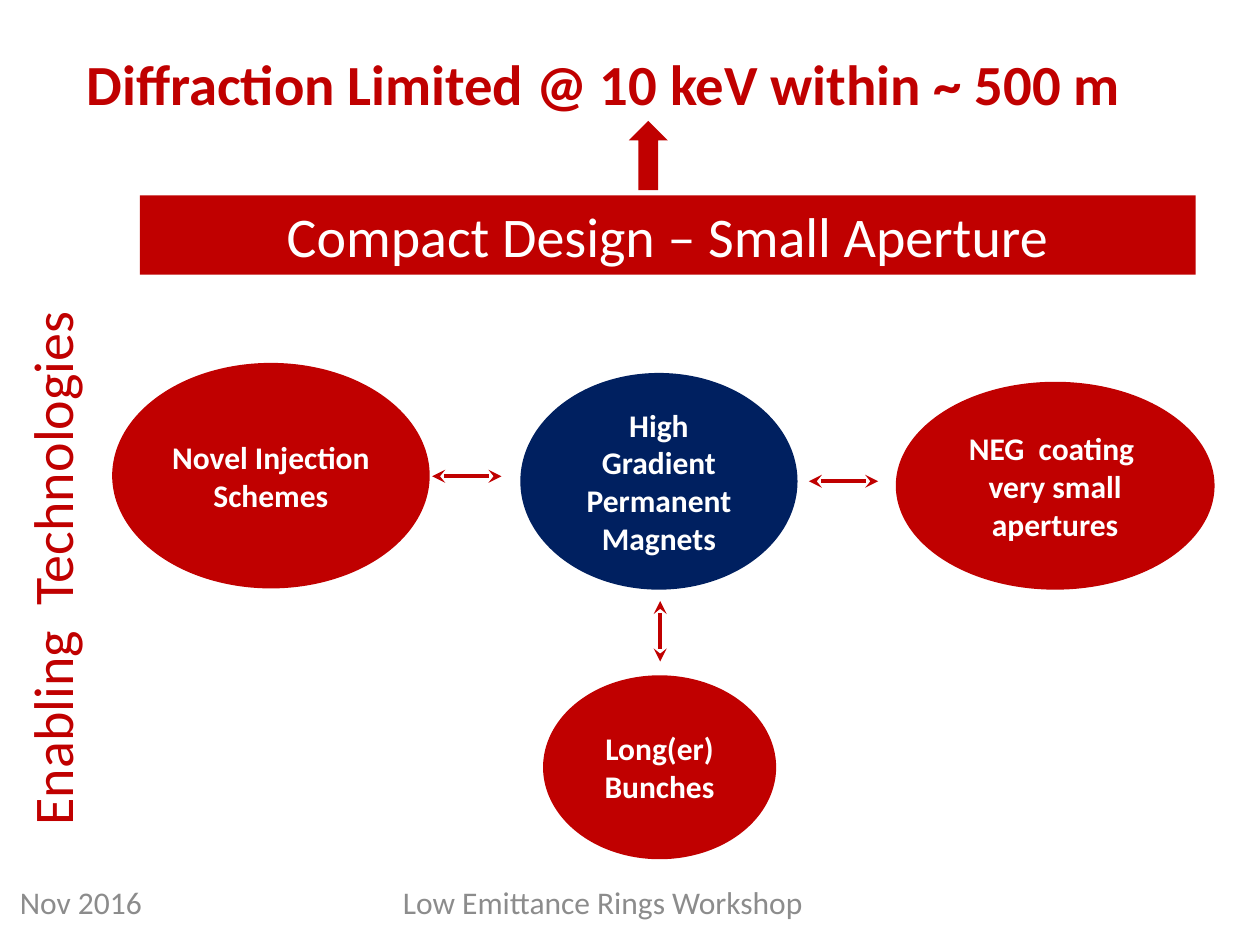
from typing import NamedTuple

from lxml.etree import SubElement
from pptx import Presentation
from pptx.dml.color import RGBColor
from pptx.enum.shapes import MSO_CONNECTOR, MSO_SHAPE
from pptx.enum.text import MSO_ANCHOR, PP_ALIGN
from pptx.oxml.ns import qn
from pptx.util import Inches, Pt

COLUMNS, ROWS = 100, 75  # grid laid over the slide
RED, NAVY, WHITE, GRAY = "C00000", "002060", "FFFFFF", "8C8C8C"


class Area(NamedTuple):
    """Left, top, width and height in grid columns and rows."""
    left: float
    top: float
    width: float
    height: float


class Style(NamedTuple):
    size: float
    color: str
    bold: bool = False
    align: PP_ALIGN = PP_ALIGN.LEFT
    anchor: MSO_ANCHOR = MSO_ANCHOR.TOP


class Label(NamedTuple):
    text: str
    area: Area
    style: Style
    vertical: bool = False


class Block(NamedTuple):
    kind: MSO_SHAPE
    area: Area
    fill: str
    text: str = ""
    style: Style = Style(18, WHITE, True, PP_ALIGN.CENTER, MSO_ANCHOR.MIDDLE)


class Link(NamedTuple):
    start: tuple[float, float]
    end: tuple[float, float]


FOOTER = Style(18, GRAY)
BANNER = Style(32, WHITE, False, PP_ALIGN.CENTER, MSO_ANCHOR.MIDDLE)

LABELS = [
    Label("Low Emittance Rings Workshop", Area(25.6, 69.6, 44.5, 4),
          FOOTER._replace(align=PP_ALIGN.CENTER)),
    Label("Nov 2016", Area(0.6, 69.6, 20.3, 4), FOOTER),
    Label("Diffraction Limited @ 10 keV within ~ 500 m", Area(5.9, 2.9, 90.6, 6.9),
          Style(32.4, RED, True, anchor=MSO_ANCHOR.BOTTOM)),
    Label("Enabling  Technologies", Area(0.9, 21.7, 7.4, 44.8), Style(32, RED), True),
]

BLOCKS = [
    Block(MSO_SHAPE.OVAL, Area(8.9, 28.8, 25.2, 17.9), RED, "Novel Injection Schemes"),
    Block(MSO_SHAPE.OVAL, Area(41.3, 29.6, 22, 17.2), NAVY, "High Gradient Permanent Magnets"),
    Block(MSO_SHAPE.OVAL, Area(71.1, 30.3, 25.3, 16.5), RED, "NEG  coating  very small apertures"),
    Block(MSO_SHAPE.OVAL, Area(43.1, 53.6, 18.5, 14.6), RED, "Long(er) Bunches"),
    Block(MSO_SHAPE.RECTANGLE, Area(11.1, 15.5, 83.8, 6.3), RED,
          "Compact Design – Small Aperture", BANNER),
    Block(MSO_SHAPE.UP_ARROW, Area(49.9, 9.6, 3.1, 5.5), RED),
]

LINKS = [
    Link((34.3, 37.8), (39.8, 37.8)),
    Link((64.2, 38.2), (69.7, 38.2)),
    Link((52.4, 47.7), (52.4, 52.5)),
]

deck = Presentation()
deck.slide_width, deck.slide_height = Inches(10), Inches(7.5)
page = deck.slides.add_slide(deck.slide_layouts[6])


def across(columns: float) -> int:
    return round(deck.slide_width * columns / COLUMNS)


def down(rows: float) -> int:
    return round(deck.slide_height * rows / ROWS)


def place(area: Area) -> tuple[int, int, int, int]:
    return across(area.left), down(area.top), across(area.width), down(area.height)


def color(value: str) -> RGBColor:
    return RGBColor.from_string(value)


def write(frame, text: str, style: Style) -> None:
    frame.text = text
    frame.word_wrap = True
    frame.vertical_anchor = style.anchor
    para = frame.paragraphs[0]
    para.alignment = style.align
    for span in para.runs:
        span.font.name = "Calibri"
        span.font.size = Pt(style.size)
        span.font.bold = style.bold
        span.font.color.rgb = color(style.color)


def draw_label(label: Label) -> None:
    box = page.shapes.add_textbox(*place(label.area))
    write(box.text_frame, label.text, label.style)
    if label.vertical:
        box.text_frame._txBody.bodyPr.set("vert", "vert270")


def draw_block(block: Block) -> None:
    shape = page.shapes.add_shape(block.kind, *place(block.area))
    shape.shadow.inherit = False
    shape.fill.solid()
    shape.fill.fore_color.rgb = color(block.fill)
    shape.line.fill.background()
    if block.text:
        write(shape.text_frame, block.text, block.style)


def draw_link(link: Link) -> None:
    (x1, y1), (x2, y2) = link
    line = page.shapes.add_connector(
        MSO_CONNECTOR.STRAIGHT, across(x1), down(y1), across(x2), down(y2))
    line.line.color.rgb = color(RED)
    line.line.width = Pt(2.5)
    # Arrowheads at both ends, no shadow
    for end in ("a:headEnd", "a:tailEnd"):
        SubElement(line.line._get_or_add_ln(), qn(end), type="stealth")
    SubElement(line._element.spPr, qn("a:effectLst"))


# Title, side heading and footer
for label in LABELS:
    draw_label(label)

# Technologies, banner and upward arrow
for block in BLOCKS:
    draw_block(block)

# Two-way links between the technologies
for link in LINKS:
    draw_link(link)

deck.save("out.pptx")
